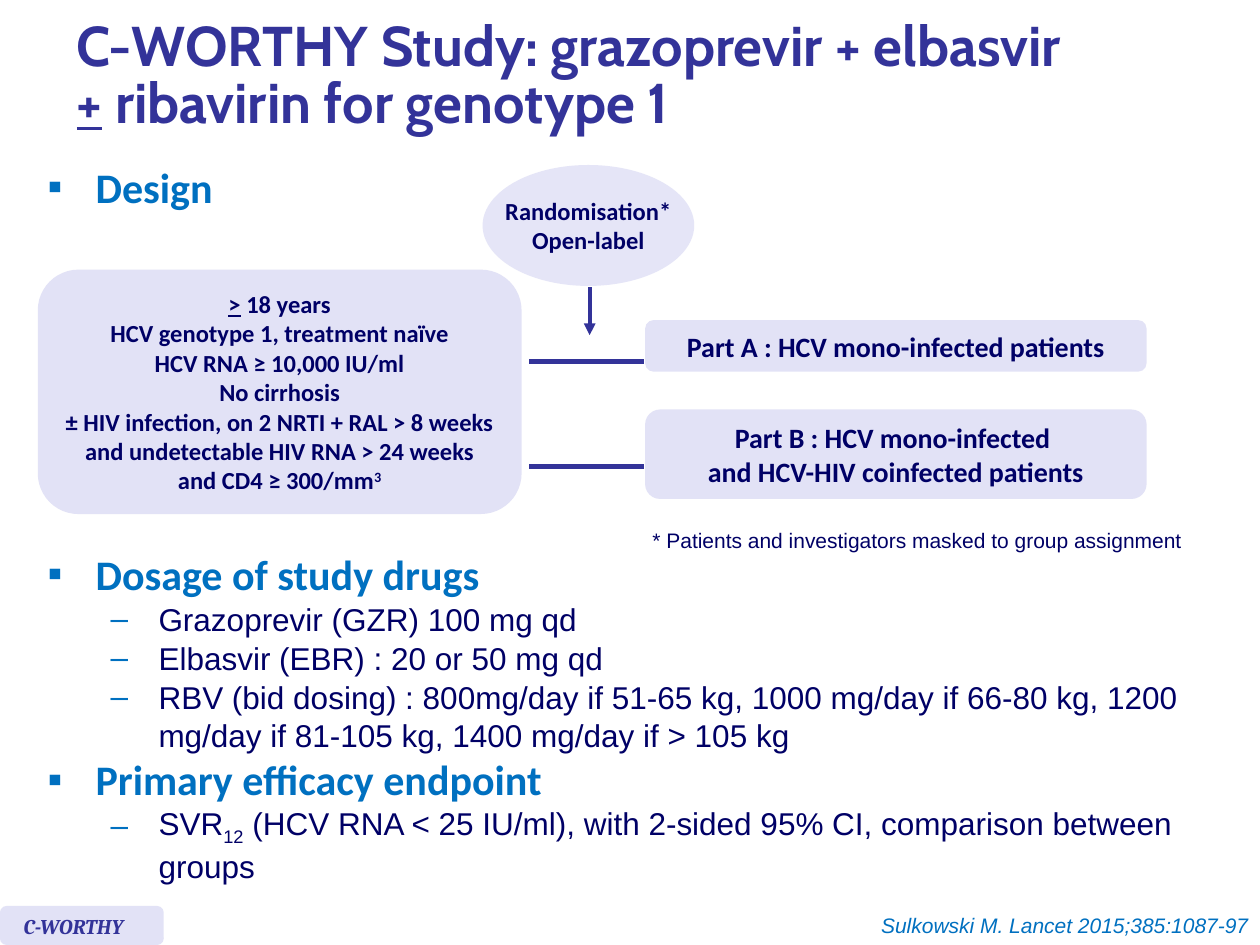
from dataclasses import dataclass
from typing import Optional

from lxml.etree import SubElement
from pptx import Presentation
from pptx.dml.color import RGBColor
from pptx.enum.shapes import MSO_CONNECTOR as Connector, MSO_SHAPE as Shape
from pptx.enum.text import MSO_ANCHOR as Anchor, MSO_AUTO_SIZE as AutoSize, PP_ALIGN as Align
from pptx.oxml.ns import qn
from pptx.util import Inches, Pt

COLORS = {"title": "333399", "heading": "0070C0", "text": "000066",
          "panel": "E2E2F6", "ellipse": "E5E5F7"}


@dataclass(frozen=True)
class Style:
    size: float
    font: str
    color: str
    bold: bool = False
    italic: bool = False


@dataclass(frozen=True)
class Phrase:
    text: str
    underline: bool = False
    baseline: int = 0


@dataclass(frozen=True)
class Line:
    phrases: tuple
    style: Style
    align: Align = Align.LEFT
    bullet: Optional[str] = None
    indent: float = 0
    before: float = 0


@dataclass(frozen=True)
class Panel:
    kind: Shape
    box: tuple
    color: str
    lines: tuple = ()
    wrap: bool = True


@dataclass(frozen=True)
class Link:
    start: tuple
    end: tuple
    width: float
    arrow: bool = False


TITLE = Style(32, "Cabin", "title", bold=True)
HEADING = Style(24, "Calibri", "heading", bold=True)
DETAIL = Style(18, "Arial", "text")
SMALL = Style(14, "Calibri", "text", bold=True)
ARM = Style(16, "Calibri", "text", bold=True)
NOTE = Style(12, "Arial", "text")
CITATION = Style(12, "Arial", "heading", italic=True)
TAG = Style(12, "Cambria", "title", bold=True, italic=True)


def rgb(name: str) -> RGBColor:
    return RGBColor.from_string(COLORS[name])


def plain(text: str, style: Style, align: Align = Align.LEFT) -> Line:
    return Line((Phrase(text),), style, align)


def centred(style: Style, *texts: str) -> tuple:
    return tuple(plain(text, style, Align.CENTER) for text in texts)


def heading(text: str, before: float = 0) -> Line:
    return Line((Phrase(text),), HEADING, bullet="▪", indent=0.38, before=before)


def detail(*phrases: Phrase, before: float = 0) -> Line:
    return Line(phrases, DETAIL, bullet="–", indent=0.88, before=before)


def add_bullet(paragraph, line: Line) -> None:
    properties = paragraph._p.get_or_add_pPr()
    properties.set("marL", str(Inches(line.indent)))
    properties.set("indent", str(Inches(-0.38)))
    color = SubElement(properties, qn("a:buClr"))
    SubElement(color, qn("a:srgbClr"), val=COLORS["heading"])
    SubElement(properties, qn("a:buFont"), typeface="Arial")
    SubElement(properties, qn("a:buChar"), char=line.bullet)


def write(frame, lines: tuple) -> None:
    for index, line in enumerate(lines):
        paragraph = frame.add_paragraph() if index else frame.paragraphs[0]
        if line.bullet:
            add_bullet(paragraph, line)
            paragraph.level = 1 if line.indent > 0.5 else 0
        paragraph.alignment = line.align
        paragraph.space_before = Pt(line.before)
        for phrase in line.phrases:
            for number, text in enumerate(phrase.text.split("\n")):
                if number:
                    paragraph.add_line_break()
                if not text:
                    continue
                run = paragraph.add_run()
                run.text = text
                font = run.font
                font.size, font.name = Pt(line.style.size), line.style.font
                font.bold, font.italic = line.style.bold, line.style.italic
                font.underline = phrase.underline
                font.color.rgb = rgb(line.style.color)
                if phrase.baseline:
                    run._r.get_or_add_rPr().set("baseline", str(phrase.baseline * 1000))


def add_text(slide, box: tuple, *lines: Line, wrap: bool = True) -> None:
    frame = slide.shapes.add_textbox(*map(Inches, box)).text_frame
    frame.word_wrap = wrap
    write(frame, lines)


def add_panel(slide, panel: Panel) -> None:
    shape = slide.shapes.add_shape(panel.kind, *map(Inches, panel.box))
    shape.shadow.inherit = False
    shape.fill.solid()
    shape.fill.fore_color.rgb = rgb(panel.color)
    shape.line.fill.background()
    shape.text_frame.word_wrap = panel.wrap
    shape.text_frame.vertical_anchor = Anchor.MIDDLE
    write(shape.text_frame, panel.lines)


def add_link(slide, link: Link) -> None:
    connector = slide.shapes.add_connector(
        Connector.STRAIGHT, *map(Inches, link.start + link.end))
    connector.line.color.rgb = rgb("title")
    connector.line.width = Pt(link.width)
    if link.arrow:
        SubElement(connector.line._get_or_add_ln(), qn("a:tailEnd"), type="triangle")
    SubElement(connector._element.spPr, qn("a:effectLst"))


def add_title(slide) -> None:
    title = slide.shapes.title
    title.left, title.top, title.width, title.height = map(Inches, (0.51, 0.08, 9.13, 1.07))
    frame = title.text_frame
    frame.auto_size = AutoSize.NONE
    frame.vertical_anchor = Anchor.MIDDLE
    write(frame, (Line((Phrase("C-WORTHY Study: grazoprevir + elbasvir \n"),
                        Phrase("+", underline=True),
                        Phrase(" ribavirin for genotype 1")), TITLE),))
    frame.paragraphs[0].line_spacing = 0.85


CRITERIA = (
    Line((Phrase(">", underline=True), Phrase(" 18 years")), SMALL, Align.CENTER),
    *centred(SMALL, "HCV genotype 1, treatment naïve", "HCV RNA ≥ 10,000 IU/ml", "No cirrhosis",
             "± HIV infection, on 2 NRTI + RAL > 8 weeks and undetectable HIV RNA > 24 weeks"),
    Line((Phrase("and CD4 ≥ 300/mm"), Phrase("3", baseline=30)), SMALL, Align.CENTER),
)
PANELS = (
    Panel(Shape.ROUNDED_RECTANGLE, (0, 7.19, 1.3, 0.31), "panel"),
    Panel(Shape.OVAL, (3.83, 1.31, 1.68, 0.96), "ellipse",
          centred(SMALL, "Randomisation*", "Open-label"), wrap=False),
    Panel(Shape.ROUNDED_RECTANGLE, (0.3, 2.14, 3.84, 1.94), "panel", CRITERIA),
    Panel(Shape.ROUNDED_RECTANGLE, (5.12, 2.54, 3.98, 0.41), "panel",
          centred(ARM, "Part A : HCV mono-infected patients")),
    Panel(Shape.ROUNDED_RECTANGLE, (5.12, 3.25, 3.98, 0.71), "panel",
          centred(ARM, "Part B : HCV mono-infected \nand HCV-HIV coinfected patients")),
)
LINKS = (Link((4.68, 2.28), (4.68, 2.66), 2.25, arrow=True),
         *(Link((4.2, y), (5.11, y), 3) for y in (2.87, 3.7)))
DOSAGES = ("Grazoprevir (GZR) 100 mg qd", "Elbasvir (EBR) : 20 or 50 mg qd",
           "RBV (bid dosing) : 800mg/day if 51-65 kg, 1000 mg/day if 66-80 kg, "
           "1200 mg/day if 81-105 kg, 1400 mg/day if > 105 kg")


def main() -> None:
    presentation = Presentation()
    presentation.slide_width, presentation.slide_height = Inches(10), Inches(7.5)
    slide = presentation.slides.add_slide(presentation.slide_layouts[5])
    add_title(slide)
    for panel in PANELS:
        add_panel(slide, panel)
    for link in LINKS:
        add_link(slide, link)
    add_text(slide, (0.28, 1.23, 1.98, 0.63), heading("Design"))
    add_text(slide, (0.28, 4.3, 9.29, 1.58), heading("Dosage of study drugs"),
             *(detail(Phrase(dosage), before=0.7) for dosage in DOSAGES),
             heading("Primary efficacy endpoint"),
             detail(Phrase("SVR"), Phrase("12", baseline=-25),
                    Phrase(" (HCV RNA < 25 IU/ml), with 2-sided 95% CI, comparison between groups")))
    add_text(slide, (5.08, 4.14, 4.44, 0.3),
             plain("* Patients and investigators masked to group assignment", NOTE), wrap=False)
    add_text(slide, (6.58, 7.19, 3.43, 0.3),
             plain("Sulkowski M. Lancet 2015;385:1087-97", CITATION, Align.RIGHT))
    add_text(slide, (0.09, 7.2, 1.04, 0.3), plain("C-WORTHY", TAG))
    presentation.save("out.pptx")


if __name__ == "__main__":
    main()
